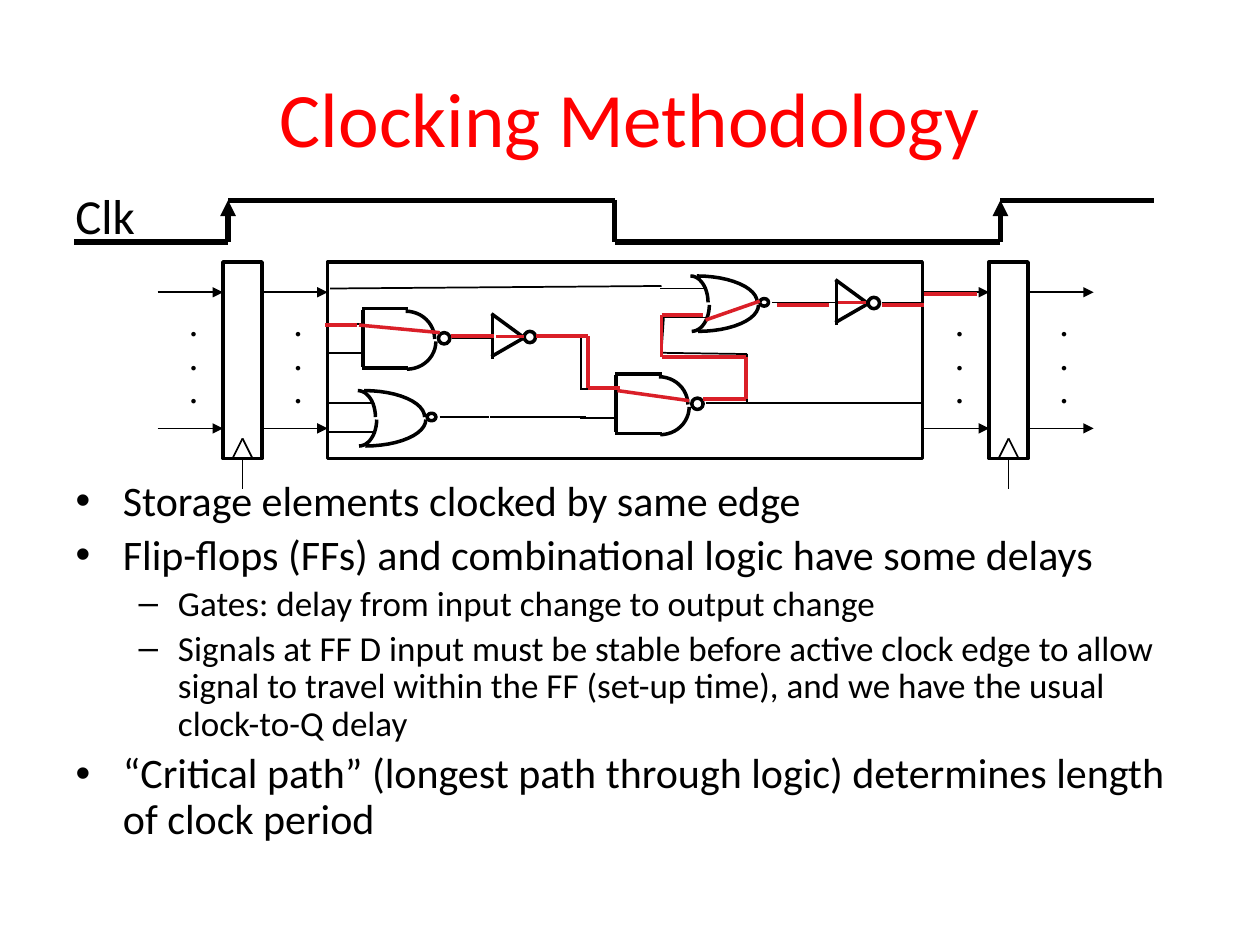
from dataclasses import dataclass
from itertools import pairwise
from math import cos, pi, sin

from lxml import etree
from pptx import Presentation
from pptx.dml.color import RGBColor
from pptx.enum.shapes import MSO_CONNECTOR, MSO_SHAPE
from pptx.enum.text import MSO_ANCHOR, MSO_AUTO_SIZE, PP_ALIGN
from pptx.oxml.ns import qn
from pptx.util import Inches, Pt

STRAIGHT = MSO_CONNECTOR.STRAIGHT
RECTANGLE, OVAL = MSO_SHAPE.RECTANGLE, MSO_SHAPE.OVAL
NO_FIT, FIT_SHAPE = MSO_AUTO_SIZE.NONE, MSO_AUTO_SIZE.SHAPE_TO_FIT_TEXT
MIDDLE, CENTER = MSO_ANCHOR.MIDDLE, PP_ALIGN.CENTER
BOTTOM_SITE = 2


@dataclass(frozen=True)
class Theme:
    font: str = "Calibri"
    dot_font: str = "Times New Roman"
    black: RGBColor = RGBColor(0x00, 0x00, 0x00)
    title: RGBColor = RGBColor(0xFF, 0x00, 0x00)
    critical: RGBColor = RGBColor(0xDA, 0x1F, 0x28)
    title_size: int = 44
    label_size: int = 28
    level_sizes: tuple = (24, 20)
    dot_size: int = 16
    wire: float = 1
    outline: float = 2
    critical_wire: float = 2.25
    clock: float = 3


THEME = Theme()

BULLETS = [
    (0, "Storage elements clocked by same edge"),
    (0, "Flip-flops (FFs) and combinational logic have some delays"),
    (1, "Gates: delay from input change to output change"),
    (1, "Signals at FF D input must be stable before active clock edge to allow "
        "signal to travel within the FF (set-up time), and we have the usual "
        "clock-to-Q delay"),
    (0, "“Critical path” (longest path through logic) determines length of clock period"),
]

# Points below are in inches from the corner of the logic block.
NANDS = [(0.27, 0.37), (2.28, 0.89)]
NORS = [(0.24, 1.02), (2.88, 0.11)]
INVERTERS = [(4.03, 0.14), (1.3, 0.41)]
WIRES = [
    [(2.01, 0.6), (2.01, 1)],
    [(1.29, 1.23), (2.05, 1.23)],
    [(2.67, 0.43), (2.65, 0.72), (3.33, 0.73), (3.33, 1.12), (4.72, 1.12)],
    [(0.02, 0.21), (2.65, 0.19)],
]
CRITICAL_GATES = [
    [(0.25, 0.5), (0.89, 0.56)],
    [(1.34, 0.59), (1.56, 0.59)],
    [(2.3, 1.02), (2.87, 1.1)],
    [(3, 0.46), (3.43, 0.31)],
    [(4.05, 0.32), (4.27, 0.32)],
]
CRITICAL_WIRES = [
    [(-0.02, 0.5), (0.23, 0.5)],
    [(0.98, 0.59), (1.32, 0.59)],
    [(1.65, 0.59), (2.07, 0.59), (2.07, 1), (2.32, 1)],
    [(2.98, 1.09), (3.32, 1.09), (3.32, 0.75), (2.65, 0.75), (2.65, 0.42), (2.98, 0.42)],
    [(3.57, 0.34), (3.98, 0.34)],
    [(4.4, 0.34), (4.73, 0.34)],
    [(4.73, 0.25), (5.15, 0.25)],
]


def add_run(paragraph, text, size, color=THEME.black, font=THEME.font, bold=None):
    run = paragraph.add_run()
    run.text = text
    run.font.name, run.font.size, run.font.bold = font, Pt(size), bold
    run.font.color.rgb = color


def place(shape, left, top, width, height):
    shape.left, shape.top = Inches(left), Inches(top)
    shape.width, shape.height = Inches(width), Inches(height)


def add_line(shapes, start, end, width=THEME.wire, color=THEME.black, arrow=False):
    connector = shapes.add_connector(STRAIGHT, *map(Inches, (*start, *end)))
    connector.line.color.rgb = color
    connector.line.width = Pt(width)
    properties = connector.element.spPr
    if arrow:
        etree.SubElement(properties.find(qn("a:ln")), qn("a:tailEnd"), type="triangle")
    etree.SubElement(properties, qn("a:effectLst"))
    return connector


def add_polyline(shapes, left, top, points, width=THEME.wire, color=THEME.black):
    corners = [(left + x, top + y) for x, y in points]
    for start, end in pairwise(corners):
        add_line(shapes, start, end, width, color)


def outline(shape):
    shape.shadow.inherit = False
    shape.fill.background()
    shape.line.color.rgb = THEME.black
    shape.line.width = Pt(THEME.outline)
    return shape


def add_outline(shapes, kind, left, top, width, height):
    return outline(shapes.add_shape(kind, *map(Inches, (left, top, width, height))))


def add_bow(shapes, left, top, width, height):
    """Draw the right half of an ellipse as an upper and a lower quarter."""
    gap, shift, steps = 0.02, 0.01, 12
    for x, y, direction in ((left, top + height, -1), (left + shift, top + height + gap, 1)):
        points = [(Inches(x + width * cos(pi / 2 * i / steps)),
                   Inches(y + direction * height * sin(pi / 2 * i / steps)))
                  for i in range(steps + 1)]
        builder = shapes.build_freeform(*points[0])
        builder.add_line_segments(points[1:], close=False)
        outline(builder.convert_to_shape())


def draw_nand(slide, left, top):
    shapes = slide.shapes.add_group_shape().shapes
    add_outline(shapes, OVAL, left + 0.61, top + 0.19, 0.09, 0.09)
    add_bow(shapes, left + 0.35, top + 0.02, 0.23, 0.22)
    for body in ([(0.37, 0), (0, 0)], [(0.01, 0.01), (0.01, 0.46)], [(0.37, 0.47), (0, 0.47)]):
        add_polyline(shapes, left, top, body, THEME.outline)
    for lead in ([(0.02, 0.12), (-0.28, 0.12)], [(0.02, 0.35), (-0.28, 0.35)],
                 [(0.72, 0.23), (1.05, 0.23)]):
        add_polyline(shapes, left, top, lead)


def draw_nor(slide, left, top):
    shapes = slide.shapes.add_group_shape().shapes
    add_bow(shapes, left + 0.05, top, 0.48, 0.21)
    add_outline(shapes, OVAL, left + 0.55, top + 0.18, 0.07, 0.06)
    add_bow(shapes, left, top, 0.14, 0.21)
    for lead in ([(0.65, 0.21), (1.04, 0.21)], [(0.12, 0.1), (-0.24, 0.1)],
                 [(0.12, 0.33), (-0.24, 0.33)]):
        add_polyline(shapes, left, top, lead)


def draw_inverter(slide, left, top):
    shapes = slide.shapes.add_group_shape().shapes
    add_outline(shapes, OVAL, left + 0.26, top + 0.14, 0.09, 0.09)
    for side in ([(0.26, 0.19), (0, 0)], [(0.26, 0.19), (0, 0.34)], [(0.01, 0.36), (0.01, 0)]):
        add_polyline(shapes, left, top, side, THEME.outline)
    for lead in ([(0.02, 0.18), (-0.29, 0.18)], [(0.37, 0.18), (0.7, 0.18)]):
        add_polyline(shapes, left, top, lead)


def draw_logic(slide, left, top, width, height):
    add_outline(slide.shapes, RECTANGLE, left, top, width, height)
    for draw_gate, corners in ((draw_nand, NANDS), (draw_nor, NORS), (draw_inverter, INVERTERS)):
        for x, y in corners:
            draw_gate(slide, left + x, top + y)
    for chains, weight, color in ((WIRES, THEME.wire, THEME.black),
                                  (CRITICAL_GATES, THEME.outline, THEME.critical),
                                  (CRITICAL_WIRES, THEME.critical_wire, THEME.critical)):
        for chain in chains:
            add_polyline(slide.shapes, left, top, chain, weight, color)


def add_label(slide, left, top, width, height):
    box = slide.shapes.add_textbox(*map(Inches, (left, top, width, height)))
    box.text_frame.word_wrap = False
    box.text_frame.auto_size = FIT_SHAPE
    return box.text_frame


def draw_bus(slide, left, top, width):
    """Draw the first and last signal of a bus, with dots for those between."""
    for y in (top + 0.24, top + 1.32):
        add_line(slide.shapes, (left, y), (left + width, y), arrow=True)
    frame = add_label(slide, left + 0.16, top + 0.32, 0.25, 0.9)
    for paragraph in (frame.paragraphs[0], frame.add_paragraph(), frame.add_paragraph()):
        add_run(paragraph, ".", THEME.dot_size, font=THEME.dot_font, bold=True)


def draw_register(slide, left, top, width, height):
    register = add_outline(slide.shapes, RECTANGLE, left, top, width, height)
    middle, bottom = left + width / 2, top + height
    stub = add_line(slide.shapes, (middle, bottom), (middle, bottom + 0.24))
    stub.begin_connect(register, BOTTOM_SITE)
    add_polyline(slide.shapes, middle, bottom, [(-0.08, 0), (0, -0.16), (0.08, 0)])
    for bus_left in (left - 0.52, left + width):
        draw_bus(slide, bus_left, top, 0.52)


def draw_clock(slide, left, top, width, height):
    shapes = slide.shapes.add_group_shape().shapes
    low, high, right = top + height, top, left + width
    rise, fall, next_rise = left + 1.22, left + 4.29, left + 7.35
    corners = [(left, low), (rise, low), (rise, high), (fall, high), (fall, low),
               (next_rise, low), (next_rise, high), (right, high)]
    for start, end in pairwise(corners):
        add_line(shapes, start, end, THEME.clock, arrow=end[1] < start[1])
    frame = add_label(slide, left - 0.09, top - 0.17, 0.69, 0.57)
    add_run(frame.paragraphs[0], "Clk", THEME.label_size)


def fill_title(title, left, top, width, height):
    place(title, left, top, width, height)
    title.text_frame.vertical_anchor = MIDDLE
    paragraph = title.text_frame.paragraphs[0]
    paragraph.alignment = CENTER
    add_run(paragraph, "Clocking Methodology", THEME.title_size, THEME.title)


def fill_body(body, left, top, width, height):
    place(body, left, top, width, height)
    frame = body.text_frame
    frame.auto_size = NO_FIT
    for index, (level, text) in enumerate(BULLETS):
        paragraph = frame.add_paragraph() if index else frame.paragraphs[0]
        paragraph.level, paragraph.line_spacing = level, 0.9
        add_run(paragraph, text, THEME.level_sizes[level])


def main():
    presentation = Presentation()
    presentation.slide_width, presentation.slide_height = Inches(10), Inches(7.5)
    # Title and content: the bullets belong in the body placeholder.
    slide = presentation.slides.add_slide(presentation.slide_layouts[1])
    fill_title(slide.shapes.title, 0.5, 0.3, 9, 1.25)
    fill_body(slide.placeholders[1], 0.5, 3.76, 9, 2.37)
    draw_clock(slide, 0.59, 1.59, 8.57, 0.33)
    for left in (1.77, 7.85):
        draw_register(slide, left, 2.08, 0.31, 1.56)
    draw_logic(slide, 2.6, 2.08, 4.72, 1.56)
    presentation.save("out.pptx")


if __name__ == "__main__":
    main()
